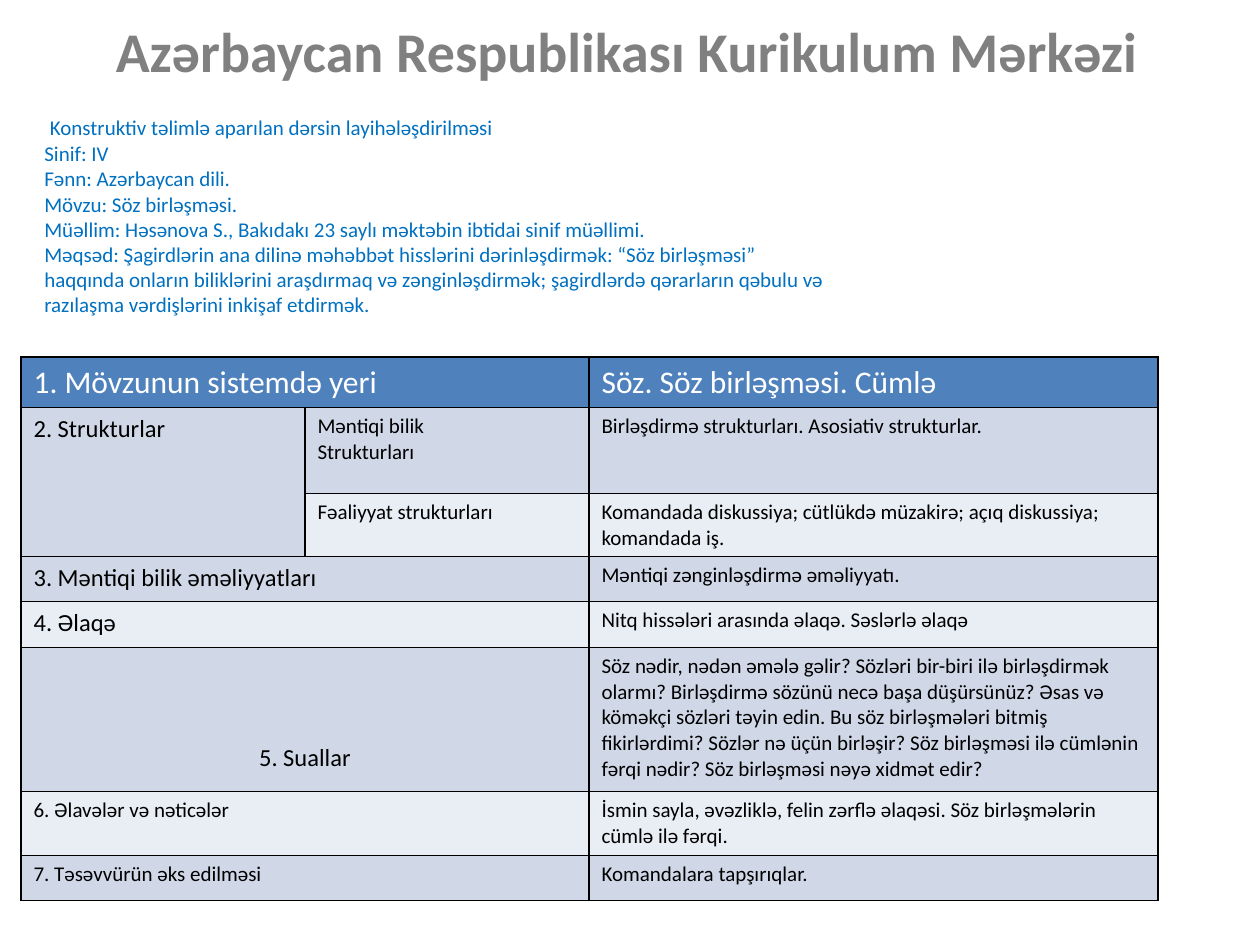
from lxml import etree
from pptx import Presentation
from pptx.dml.color import RGBColor
from pptx.enum.text import MSO_ANCHOR, PP_ALIGN
from pptx.oxml.ns import qn
from pptx.util import Inches, Pt

PX_PER_INCH = 126
FONT = "Calibri"
CENTER = PP_ALIGN.CENTER
TOP = MSO_ANCHOR.TOP
TITLE_ONLY = 5

BLACK, WHITE, GREY, BLUE = "000000", "FFFFFF", "808080", "0070C0"
HEADER_FILL, BAND_DARK, BAND_LIGHT = "4F81BD", "D0D8E8", "E9EDF4"

LESSON_DETAILS = [
    "Konstruktiv təlimlə aparılan dərsin layihələşdirilməsi",
    "Sinif: IV",
    "Fənn: Azərbaycan dili.",
    "Mövzu: Söz birləşməsi.",
    "Müəllim: Həsənova S., Bakıdakı 23 saylı məktəbin ibtidai sinif müəllimi.",
    "Məqsəd: Şagirdlərin ana dilinə məhəbbət hisslərini dərinləşdirmək: “Söz birləşməsi” "
    "haqqında onların biliklərini araşdırmaq və zənginləşdirmək; şagirdlərdə qərarların "
    "qəbulu və razılaşma vərdişlərini inkişaf etdirmək.",
]

COLUMN_WIDTHS = [284, 284, 569]
# Height, label, label size, sub-label, content
PLAN_ROWS = [
    (50, "1. Mövzunun sistemdə yeri", 18, "", "Söz. Söz birləşməsi. Cümlə"),
    (86, "2. Strukturlar", 14, "Məntiqi bilik\nStrukturları",
     "Birləşdirmə strukturları. Asosiativ strukturlar."),
    (63, "", 14, "Fəaliyyat strukturları",
     "Komandada diskussiya; cütlükdə müzakirə; açıq diskussiya; komandada iş."),
    (45, "3. Məntiqi bilik əməliyyatları", 14, "", "Məntiqi zənginləşdirmə əməliyyatı."),
    (46, "4. Əlaqə", 14, "", "Nitq hissələri arasında əlaqə. Səslərlə əlaqə"),
    (144, "5. Suallar", 14, "",
     "Söz nədir, nədən əmələ gəlir? Sözləri bir-biri ilə birləşdirmək olarmı? "
     "Birləşdirmə sözünü necə başa düşürsünüz? Əsas və köməkçi sözləri təyin edin. "
     "Bu söz birləşmələri bitmiş fikirlərdimi? Sözlər nə üçün birləşir? Söz birləşməsi "
     "ilə cümlənin fərqi nədir? Söz birləşməsi nəyə xidmət edir?"),
    (64, "6. Əlavələr və nəticələr", 12, "",
     "İsmin sayla, əvəzliklə, felin zərflə əlaqəsi. Söz birləşmələrin cümlə ilə fərqi."),
    (45, "7. Təsəvvürün əks edilməsi", 12, "", "Komandalara tapşırıqlar."),
]
STRUCTURES_ROW, QUESTIONS_ROW = 1, 5


def px(length):
    return round(length * Inches(1) / PX_PER_INCH)


def rgb(value):
    return RGBColor.from_string(value)


def style_font(font, size, color, bold=False):
    font.name = FONT
    font.size = Pt(size)
    font.bold = bold
    font.color.rgb = rgb(color)


def add_title(slide):
    title = slide.shapes.title
    title.left, title.top, title.width, title.height = px(94), px(10), px(1066), px(81)
    title.text_frame.word_wrap = False
    title.text_frame.text = "Azərbaycan Respublikası Kurikulum Mərkəzi"
    heading = title.text_frame.paragraphs[0]
    heading.alignment = CENTER
    style_font(heading.font, 32, GREY, bold=True)


def add_lesson_details(slide):
    frame = slide.shapes.add_textbox(px(32), px(105), px(819), px(220)).text_frame
    frame.word_wrap = True
    for index, detail in enumerate(LESSON_DETAILS):
        line = frame.add_paragraph() if index else frame.paragraphs[0]
        style_font(line.font, 12, BLUE)
        if index == 0:
            lead = line.add_run()
            lead.text = " "
            style_font(lead.font, 14, BLACK, bold=True)
        line.add_run().text = detail


def draw_borders(cell):
    properties = cell._tc.get_or_add_tcPr()
    for position, side in enumerate(("lnL", "lnR", "lnT", "lnB")):
        border = etree.Element(qn(f"a:{side}"), w=str(Pt(1)))
        fill = etree.SubElement(border, qn("a:solidFill"))
        etree.SubElement(fill, qn("a:srgbClr"), val=BLACK)
        properties.insert(position, border)


def fill_cell(cell, text, size, text_color, background):
    draw_borders(cell)
    cell.fill.solid()
    cell.fill.fore_color.rgb = rgb(background)
    cell.vertical_anchor = TOP
    cell.text = text
    for paragraph in cell.text_frame.paragraphs:
        style_font(paragraph.font, size, text_color)


def add_lesson_plan(slide):
    heights = [row[0] for row in PLAN_ROWS]
    plan = slide.shapes.add_table(
        len(heights), len(COLUMN_WIDTHS), px(21), px(357),
        px(sum(COLUMN_WIDTHS)), px(sum(heights))).table
    for column, width in zip(plan.columns, COLUMN_WIDTHS):
        column.width = px(width)

    for index, (height, label, label_size, sub_label, content) in enumerate(PLAN_ROWS):
        plan.rows[index].height = px(height)
        is_header = index == 0
        color = WHITE if is_header else BLACK
        band = BAND_DARK if index % 2 else BAND_LIGHT
        background = HEADER_FILL if is_header else band
        content_size = label_size if is_header else 12
        texts = [(label, label_size), (sub_label, 12), (content, content_size)]
        for column, (text, size) in enumerate(texts):
            fill_cell(plan.cell(index, column), text, size, color, background)
        if not sub_label:
            plan.cell(index, 0).merge(plan.cell(index, 1))

    plan.cell(STRUCTURES_ROW, 0).merge(plan.cell(STRUCTURES_ROW + 1, 0))
    questions = plan.cell(QUESTIONS_ROW, 0)
    questions.margin_top = px(96)
    questions.text_frame.paragraphs[0].alignment = CENTER


def main():
    presentation = Presentation()
    presentation.slide_width, presentation.slide_height = Inches(10), Inches(7.5)
    slide = presentation.slides.add_slide(presentation.slide_layouts[TITLE_ONLY])
    add_title(slide)
    add_lesson_details(slide)
    add_lesson_plan(slide)
    presentation.save("out.pptx")


if __name__ == "__main__":
    main()
